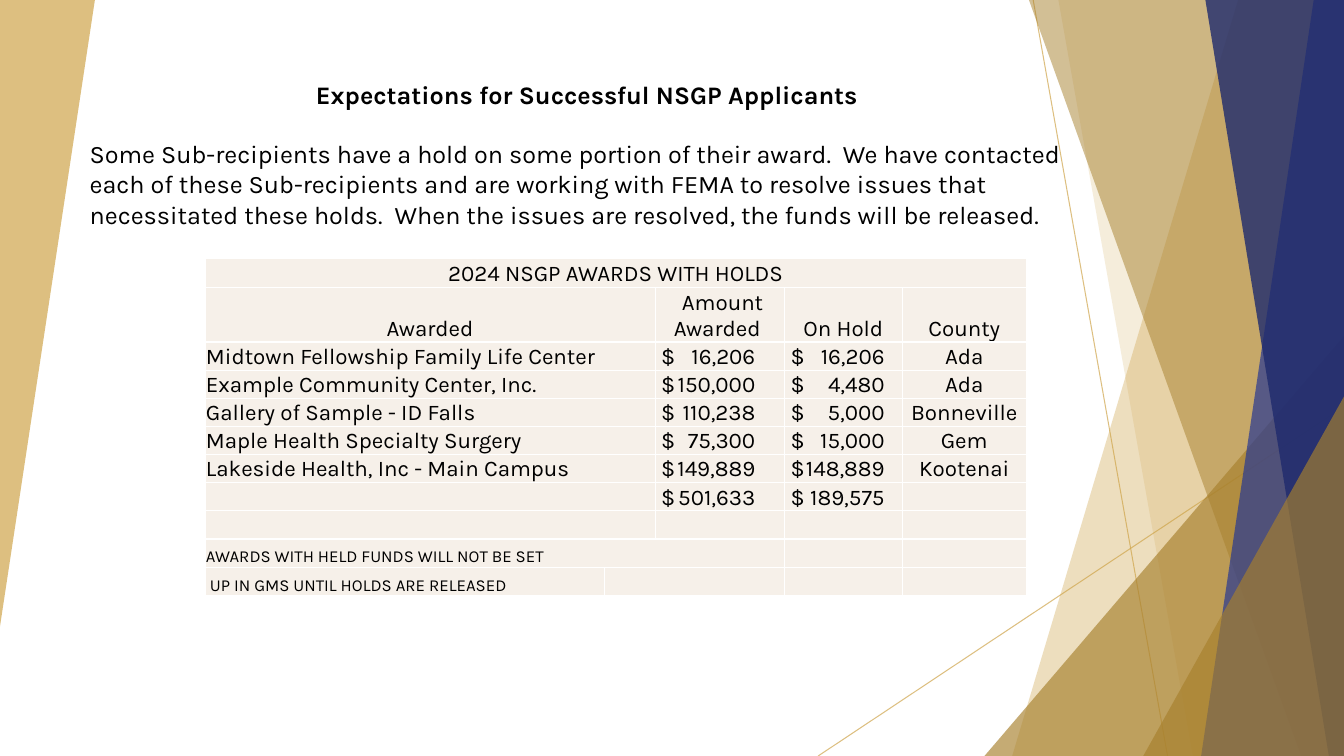
from lxml import etree
from pptx import Presentation, util as u
from pptx.dml.color import RGBColor
from pptx.enum import shapes, text
from pptx.oxml import ns

COLS, ROWS = 160, 90
UNIT = u.Inches(1 / 12)
FACE = "Karla"
GOLD = RGBColor(0xCF, 0xA5, 0x4B)
BRONZE = RGBColor(0xA7, 0x80, 0x2D)
BLUE = RGBColor(0x28, 0x38, 0x91)
NAVY = RGBColor(0x1E, 0x2A, 0x6D)
CREAM = RGBColor(0xF6, 0xF0, 0xE9)
WHITE = RGBColor(0xFF, 0xFF, 0xFF)
BLACK = RGBColor(0, 0, 0)
LEFT, MID = text.PP_ALIGN.LEFT, text.PP_ALIGN.CENTER

TITLE = "Expectations for Successful NSGP Applicants "
BODY = ("Some Sub-recipients have a hold on some portion of their award.  "
        "We have contacted each of these Sub-recipients and are working with "
        "FEMA to resolve issues that necessitated these holds.  When the "
        "issues are resolved, the funds will be released.")
HEADS = ["Awarded", "", " Amount Awarded ", " On Hold ", "County"]
AWARDS = [
    ("Midtown Fellowship Family Life Center", "16,206", "16,206", "Ada"),
    ("Example Community Center, Inc.", "150,000", "4,480", "Ada"),
    ("Gallery of Sample - ID Falls", "110,238", "5,000", "Bonneville"),
    ("Maple Health Specialty Surgery", "75,300", "15,000", "Gem"),
    ("Lakeside Health, Inc - Main Campus", "149,889", "148,889", "Kootenai"),
    ("", "501,633", "189,575", ""),
]
NOTES = ["AWARDS WITH HELD FUNDS WILL NOT BE SET",
         " UP IN GMS UNTIL HOLDS ARE RELEASED"]
WIDTHS = [47.6, 6, 15.4, 14, 14.8]
HEIGHTS = [3.4, 6.5] + [3.35] * 9
TAB = 11.2


def grid(n):
    return u.Emu(round(n * UNIT))


def fade(fill, share):
    color = fill._xPr.find(".//" + ns.qn("a:srgbClr"))
    etree.SubElement(color, ns.qn("a:alpha"), val=str(share * 1000))


def tint(shape, color, share):
    shape.shadow.inherit = False
    shape.fill.solid()
    shape.fill.fore_color.rgb = color
    fade(shape.fill, share)
    shape.line.fill.background()


def band(slide, points, color, share):
    spots = [(grid(x), grid(y)) for x, y in points]
    form = slide.shapes.build_freeform(*spots[0], scale=1.0)
    form.add_line_segments(spots[1:], close=True)
    tint(form.convert_to_shape(), color, share)


def wedge(slide, x, y):
    shape = slide.shapes.add_shape(
        shapes.MSO_SHAPE.ISOSCELES_TRIANGLE,
        grid(x), grid(y), grid(COLS - x), grid(ROWS - y))
    shape.adjustments[0] = 1.0
    tint(shape, BRONZE, 66)


def ray(slide, *ends):
    line = slide.shapes.add_connector(
        shapes.MSO_CONNECTOR.STRAIGHT, *map(grid, ends))
    line.line.color.rgb = GOLD
    line.line.width = u.Pt(0.75)
    fade(line.line.fill, 70)
    etree.SubElement(line._element.spPr, ns.qn("a:effectLst"))


def write(para, words, size, align=LEFT, bold=False):
    para.alignment = align
    run = para.add_run()
    run.text = words
    run.font.name = FACE
    run.font.size = u.Pt(size)
    run.font.bold = bold
    run.font.color.rgb = BLACK


def intro(slide):
    box = slide.shapes.add_textbox(grid(9.5), grid(8.8), grid(121.5), grid(23))
    frame = box.text_frame
    frame.word_wrap = True
    write(frame.paragraphs[0], TITLE, 18, MID, True)
    para = frame.add_paragraph()
    para.space_before = u.Pt(21)
    write(para, BODY, 18)


def edge(cell):
    props = cell._tc.get_or_add_tcPr()
    for side in "LRTB":
        line = etree.SubElement(
            props, ns.qn("a:ln" + side), w=str(u.Pt(1)))
        fill = etree.SubElement(line, ns.qn("a:solidFill"))
        etree.SubElement(fill, ns.qn("a:srgbClr"), val=str(WHITE))


def dress(cell):
    edge(cell)
    cell.fill.solid()
    cell.fill.fore_color.rgb = CREAM
    cell.vertical_anchor = text.MSO_ANCHOR.BOTTOM
    cell.margin_left = cell.margin_right = cell.margin_top = u.Inches(0.01)
    cell.margin_bottom = 0
    last = cell.text_frame.paragraphs[0]._p.get_or_add_endParaRPr()
    last.set("sz", "1600")


def put(cell, words, align=LEFT, size=16):
    if words:
        para = cell.text_frame.paragraphs[0]
        para._p.remove(para._p.get_or_add_endParaRPr())
        write(para, words, size, align)


def money(cell, sum):
    put(cell, "$\t" + sum)
    cell.margin_left = u.Inches(0.06)
    props = cell.text_frame.paragraphs[0]._p.get_or_add_pPr()
    tabs = etree.SubElement(props, ns.qn("a:tabLst"))
    etree.SubElement(tabs, ns.qn("a:tab"), pos=str(grid(TAB)), algn="r")


def holds(slide):
    table = slide.shapes.add_table(
        len(HEIGHTS), len(WIDTHS), grid(24.4), grid(30.8),
        grid(sum(WIDTHS)), grid(sum(HEIGHTS))).table
    table.first_row = table.horz_banding = False
    for col, width in zip(table.columns, WIDTHS):
        col.width = grid(width)
    for row, height in zip(table.rows, HEIGHTS):
        row.height = grid(height)
    for cell in table.iter_cells():
        dress(cell)

    spans = [(0, 0, 4), (9, 0, 2), (10, 1, 2)]
    spans += [(r, 0, 1) for r in range(1, 9)]
    for r, start, end in spans:
        table.cell(r, start).merge(table.cell(r, end))

    put(table.cell(0, 0), "2024 NSGP AWARDS WITH HOLDS", MID)
    for c, head in enumerate(HEADS):
        put(table.cell(1, c), head, MID)
    for r, (name, award, held, county) in enumerate(AWARDS, 2):
        put(table.cell(r, 0), name)
        money(table.cell(r, 2), award)
        money(table.cell(r, 3), held)
        put(table.cell(r, 4), county, MID)
    for r, note in enumerate(NOTES, 9):
        put(table.cell(r, 0), note, size=12)


def side(slide, top, foot, color, share):
    points = [(top, 0), (COLS, 0), (COLS, ROWS), (foot, ROWS)]
    band(slide, points, color, share)


def main():
    deck = Presentation()
    deck.slide_width, deck.slide_height = grid(COLS), grid(ROWS)
    slide = deck.slides.add_slide(deck.slide_layouts[6])
    band(slide, [(0, 0), (11.3, 0), (0, 74.6)], GOLD, 70)
    ray(slide, 123, 0, 139, ROWS)
    ray(slide, COLS, 48.4, 97.4, ROWS)
    side(slide, 147.4, 120.5, GOLD, 36)
    side(slide, 126, 142, GOLD, 20)
    wedge(slide, 117.2, 40)
    side(slide, 122.5, 154.9, BRONZE, 50)
    side(slide, 156.4, 143, BLUE, 70)
    side(slide, 143.5, 158.2, NAVY, 80)
    wedge(slide, 136.1, 47.2)
    intro(slide)
    holds(slide)
    deck.save("out.pptx")


if __name__ == "__main__":
    main()
